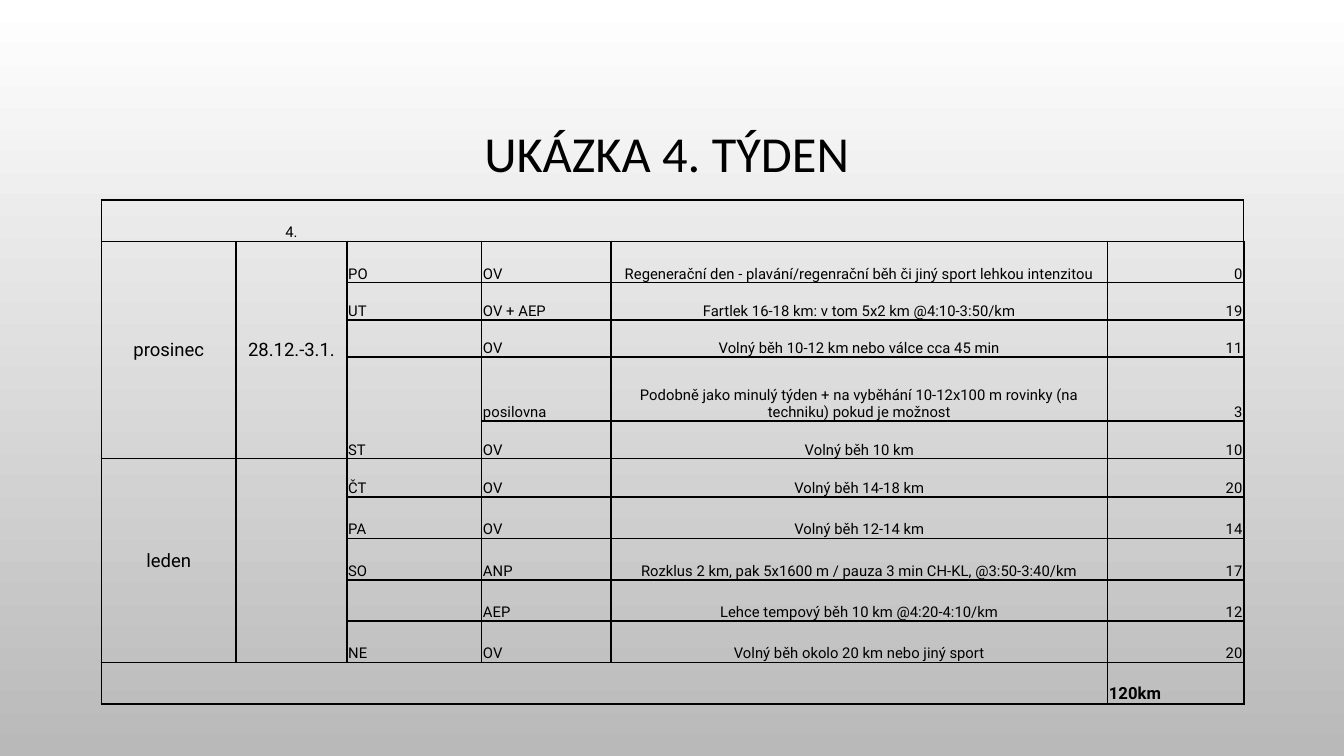
from dataclasses import dataclass

from lxml.etree import SubElement
from pptx import Presentation
from pptx.dml.color import RGBColor
from pptx.enum.text import MSO_ANCHOR as Anchor, PP_ALIGN as Align
from pptx.oxml.ns import qn
from pptx.util import Inches, Pt


@dataclass(frozen=True)
class Theme:
    ink: str = "000000"
    top: str = "FFFFFF"
    bottom: str = "B9B9B9"
    title_font: str = "Calibri"
    table_font: str = "Roboto"
    title_size: float = 27.2
    body_size: float = 8
    period_size: float = 10
    total_size: float = 9
    thin: float = 0.75
    line: float = 1


THEME = Theme()
COLUMNS = [1.01, 0.83, 1.01, 0.97, 1.3, 1.1, 1.32, 1.02]
ROWS = [0.31, 0.31, 0.28, 0.28, 0.48, 0.28, 0.29] + [0.31] * 5
SESSIONS = [
    ("PO", "OV", "Regenerační den - plavání/regenrační běh či jiný sport lehkou intenzitou", "0"),
    ("UT", "OV + AEP", "Fartlek 16-18 km: v tom 5x2 km @4:10-3:50/km", "19"),
    ("", "OV", "Volný běh 10-12 km nebo válce cca 45 min", "11"),
    ("ST", "posilovna", "Podobně jako minulý týden + na vyběhání 10-12x100 m rovinky (na techniku) pokud je možnost", "3"),
    ("", "OV", "Volný běh 10 km", "10"),
    ("ČT", "OV", "Volný běh 14-18 km", "20"),
    ("PA", "OV", "Volný běh 12-14 km", "14"),
    ("SO", "ANP", "Rozklus 2 km, pak 5x1600 m / pauza 3 min CH-KL, @3:50-3:40/km", "17"),
    ("", "AEP", "Lehce tempový běh 10 km @4:20-4:10/km", "12"),
    ("NE", "OV", "Volný běh okolo 20 km nebo jiný sport", "20"),
]


def style_run(span, font, size, bold=False):
    span.font.name = font
    span.font.size = Pt(size)
    span.font.bold = bold
    span.font.color.rgb = RGBColor.from_string(THEME.ink)


def paint_background(page):
    fill = page.background.fill
    fill.gradient()
    fill.gradient_angle = 270
    for stop, position, color in zip(fill.gradient_stops, (0, 1), (THEME.top, THEME.bottom)):
        stop.position = position
        stop.color.rgb = RGBColor.from_string(color)


def add_title(page, left, top, width, height):
    box = page.shapes.add_textbox(Inches(left), Inches(top), Inches(width), Inches(height))
    frame = box.text_frame
    frame.word_wrap = True
    frame.vertical_anchor = Anchor.MIDDLE
    frame.text = "UKÁZKA 4. TÝDEN "
    para = frame.paragraphs[0]
    para.alignment = Align.CENTER
    para.line_spacing = 0.9
    style_run(para.runs[0], THEME.title_font, THEME.title_size)


def set_borders(cell, widths):
    properties = cell._tc.get_or_add_tcPr()
    for side, width in zip("LRTB", widths):
        line = SubElement(properties, qn("a:ln" + side), w=str(Pt(width)))
        if width:
            fill = SubElement(line, qn("a:solidFill"))
            SubElement(fill, qn("a:srgbClr"), val=THEME.ink)
        else:
            SubElement(line, qn("a:noFill"))


def prepare_cell(cell, row, column):
    if row == 0:
        left = THEME.thin if column == 0 else 0
        right = THEME.thin if column == len(COLUMNS) - 1 else 0
        set_borders(cell, (left, right, THEME.thin, THEME.line))
    else:
        set_borders(cell, [THEME.line] * 4)
    cell.fill.background()
    cell.margin_left = cell.margin_right = cell.margin_top = Inches(0.01)
    cell.margin_bottom = 0
    SubElement(cell.text_frame.paragraphs[0]._p, qn("a:endParaRPr"), sz=str(int(THEME.body_size * 100)))


def write_cell(cell, text, align=Align.LEFT, anchor=Anchor.BOTTOM, size=THEME.body_size, bold=False):
    if not text:
        return
    cell.vertical_anchor = anchor
    para = cell.text_frame.paragraphs[0]
    para.text = text
    para.alignment = align
    style_run(para.runs[0], THEME.table_font, size, bold)


def add_plan(page, left, top, width, height):
    frame = page.shapes.add_table(
        len(ROWS), len(COLUMNS), Inches(left), Inches(top), Inches(width), Inches(height))
    table = frame.table
    table.first_row = table.horz_banding = False
    for column, size in zip(table.columns, COLUMNS):
        column.width = Inches(size * width / sum(COLUMNS))
    for row, size in zip(table.rows, ROWS):
        row.height = Inches(size * height / sum(ROWS))
    for row in range(len(ROWS)):
        for column in range(len(COLUMNS)):
            prepare_cell(table.cell(row, column), row, column)

    write_cell(table.cell(0, 1), "4.", Align.CENTER)
    for row, month, dates in ((1, "prosinec", "28.12.-3.1."), (6, "leden", "")):
        for column, text in enumerate((month, dates)):
            table.cell(row, column).merge(table.cell(row + 4, column))
            write_cell(table.cell(row, column), text, Align.CENTER, Anchor.MIDDLE, THEME.period_size)
    table.cell(4, 2).merge(table.cell(5, 2))
    for row, (day, kind, workout, distance) in enumerate(SESSIONS, 1):
        table.cell(row, 4).merge(table.cell(row, 6))
        write_cell(table.cell(row, 2), day)
        write_cell(table.cell(row, 3), kind)
        write_cell(table.cell(row, 4), workout, Align.CENTER)
        write_cell(table.cell(row, 7), distance, Align.RIGHT)
    last = len(ROWS) - 1
    table.cell(last, 0).merge(table.cell(last, 6))
    write_cell(table.cell(last, 7), "120km", size=THEME.total_size, bold=True)


def main():
    deck = Presentation()
    deck.slide_width = Inches(10.08)
    deck.slide_height = Inches(5.67)
    page = deck.slides.add_slide(deck.slide_layouts[6])
    paint_background(page)
    add_title(page, 0.76, 0.51, 8.57, 1.32)
    add_plan(page, 0.76, 1.5, 8.57, 3.78)
    deck.save("out.pptx")


if __name__ == "__main__":
    main()
